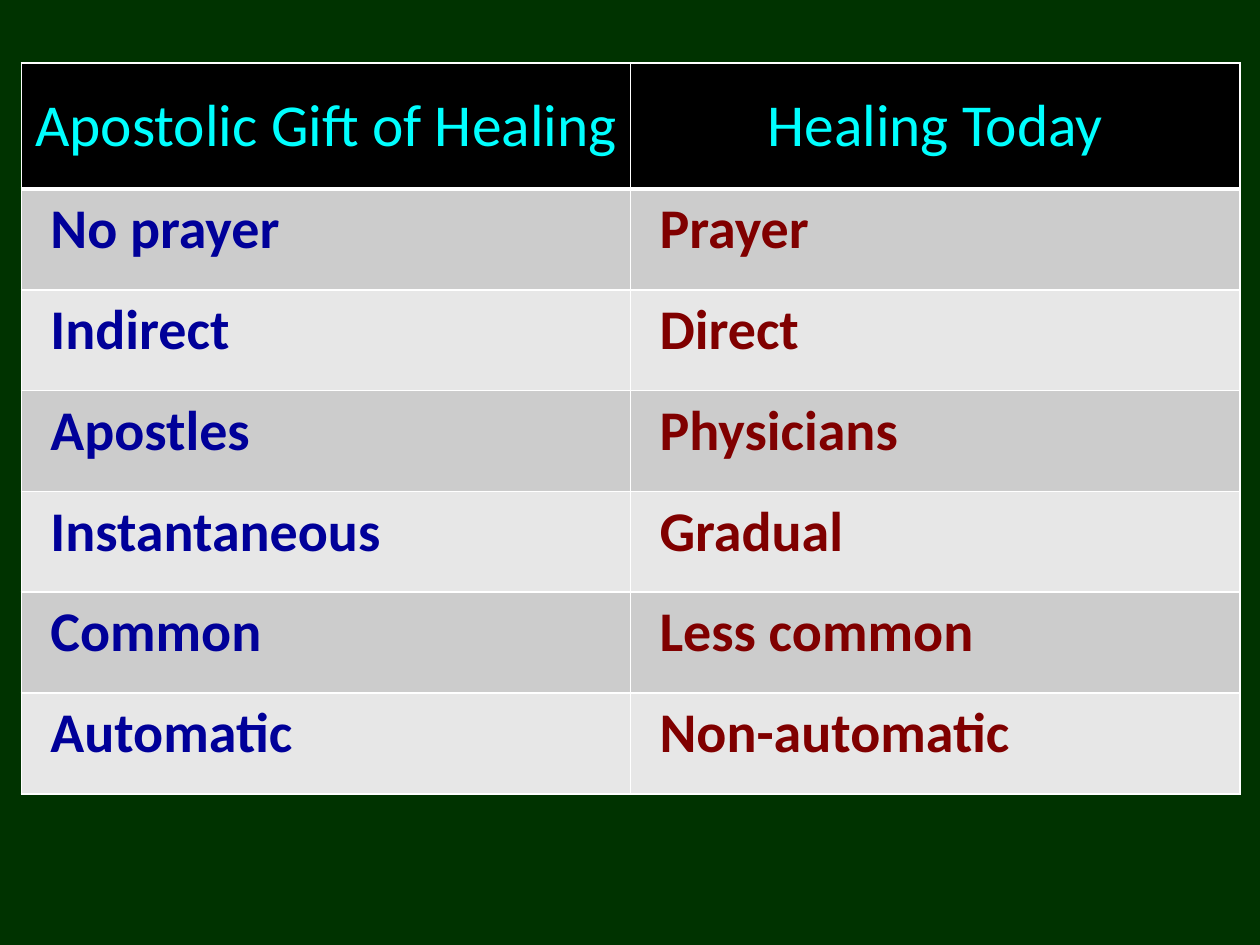
from lxml import etree
from pptx import Presentation
from pptx.dml.color import RGBColor
from pptx.enum.text import MSO_ANCHOR, PP_ALIGN
from pptx.oxml.ns import qn
from pptx.util import Inches, Pt

CENTER, LEFT = PP_ALIGN.CENTER, PP_ALIGN.LEFT
MIDDLE, TOP = MSO_ANCHOR.MIDDLE, MSO_ANCHOR.TOP

COLORS = {
    "background": "003300",
    "border": "FFFFFF",
    "header_fill": "000000",
    "header_text": "00FFFF",
    "dark_band": "CCCCCC",
    "light_band": "E7E7E7",
    "apostolic": "000099",
    "today": "800000",
}
HEADINGS = ("Apostolic Gift of Healing", "Healing Today")
CONTRASTS = [
    ("No prayer", "Prayer"),
    ("Indirect", "Direct"),
    ("Apostles", "Physicians"),
    ("Instantaneous", "Gradual"),
    ("Common", "Less common"),
    ("Automatic", "Non-automatic"),
]


def rgb(name):
    """Return the named colour."""
    return RGBColor.from_string(COLORS[name])


def set_borders(cell, **widths):
    """Draw the cell's four borders, with widths in points keyed by side."""
    properties = cell._tc.get_or_add_tcPr()
    for side in ("L", "R", "T", "B"):
        line = etree.SubElement(
            properties, qn(f"a:ln{side}"), w=str(Pt(widths.get(side, 1)))
        )
        fill = etree.SubElement(line, qn("a:solidFill"))
        etree.SubElement(fill, qn("a:srgbClr"), val=COLORS["border"])


def write_text(cell, text, color, size, bold=False, align=LEFT, anchor=TOP, indent=0):
    """Write formatted text into a table cell."""
    cell.vertical_anchor = anchor
    paragraph = cell.text_frame.paragraphs[0]
    paragraph.alignment = align
    if indent:
        properties = paragraph._p.get_or_add_pPr()
        properties.set("marL", str(Inches(indent)))
        properties.set("indent", "0")
    run = paragraph.add_run()
    run.text = text
    run.font.name = "Calibri"
    run.font.size = Pt(size)
    run.font.bold = bold
    run.font.color.rgb = rgb(color)


def fill_cell(cell, color):
    """Give a cell a solid fill."""
    cell.fill.solid()
    cell.fill.fore_color.rgb = rgb(color)


def add_comparison_table(slide, left, top, width, height, header_height):
    """Place the healing comparison table in the given box."""
    row_count = len(CONTRASTS) + 1
    table = slide.shapes.add_table(
        row_count, len(HEADINGS), left, top, width, height
    ).table
    table.rows[0].height = header_height
    for row in range(1, row_count):
        table.rows[row].height = (height - header_height) // len(CONTRASTS)

    for column, heading in enumerate(HEADINGS):
        cell = table.cell(0, column)
        set_borders(cell, B=3)
        fill_cell(cell, "header_fill")
        write_text(cell, heading, "header_text", 34, align=CENTER, anchor=MIDDLE)

    for row, contrast in enumerate(CONTRASTS, start=1):
        band = "dark_band" if row % 2 else "light_band"
        for column, (text, color) in enumerate(zip(contrast, ("apostolic", "today"))):
            cell = table.cell(row, column)
            set_borders(cell, T=3 if row == 1 else 1)
            fill_cell(cell, band)
            write_text(cell, text, color, 32, bold=True, indent=0.13)


def main():
    """Build and save the presentation."""
    presentation = Presentation()
    presentation.slide_width = Inches(10)
    presentation.slide_height = Inches(7.5)
    slide = presentation.slides.add_slide(presentation.slide_layouts[6])
    slide.background.fill.solid()
    slide.background.fill.fore_color.rgb = rgb("background")
    add_comparison_table(
        slide, Inches(0.17), Inches(0.5), Inches(9.67), Inches(5.8), Inches(1)
    )
    presentation.save("out.pptx")


if __name__ == "__main__":
    main()
